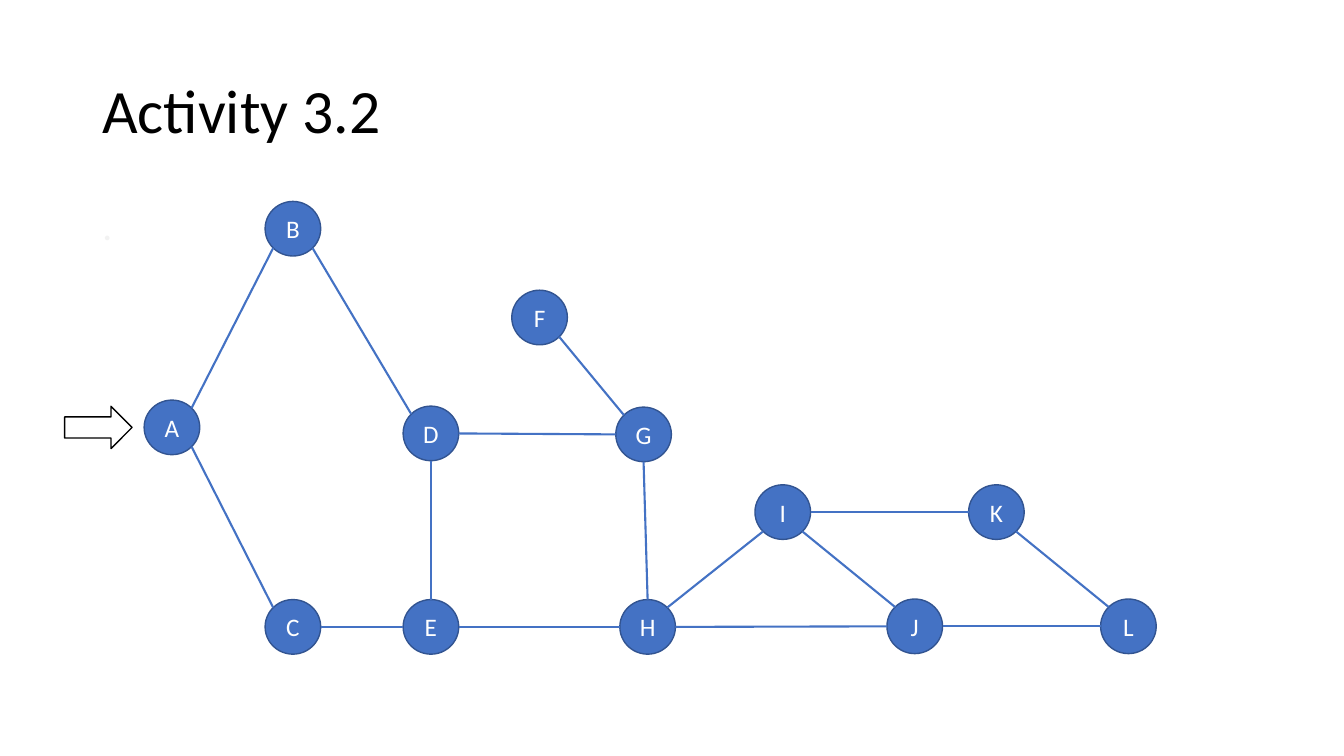
"""Build the Activity 3.2 slide: a graph of twelve nodes with a start arrow."""
import math
from dataclasses import dataclass

import pptx
import pptx.dml.color
import pptx.enum.shapes
import pptx.enum.text
import pptx.oxml.ns
import pptx.util
from lxml import etree

Pt = pptx.util.Pt
SHAPE = pptx.enum.shapes.MSO_SHAPE
ANCHOR = pptx.enum.text.MSO_ANCHOR
ALIGN = pptx.enum.text.PP_ALIGN


@dataclass(frozen=True)
class Theme:
    font: str = "Calibri"
    black: str = "000000"
    white: str = "FFFFFF"
    faint: str = "F2F2F2"
    blue: str = "4472C4"
    outline: str = "325491"
    title_size: float = 44
    body_size: float = 28
    node_size: float = 18
    outline_width: float = 1
    edge_width: float = 1.5


NODE_W, NODE_H = 39.7, 39
NODES = {
    "A": (122.8, 305.3), "B": (209.2, 163.4), "C": (209.2, 447.8),
    "D": (307.8, 309.6), "E": (307.8, 447.8), "F": (385.4, 226.8),
    "G": (459.7, 310.3), "H": (462.6, 447.8), "I": (559.1, 365.8),
    "J": (653.4, 447.4), "K": (711.7, 365.8), "L": (806, 447.4),
}
ANGLES = {"e": 0, "se": 45, "s": 90, "sw": 135, "w": 180, "nw": 225, "n": 270, "ne": 315}
EDGES = [
    ("A", "ne", "B", "sw"), ("A", "se", "C", "nw"), ("B", "se", "D", "nw"),
    ("C", "e", "E", "w"), ("D", "s", "E", "n"), ("D", "e", "G", "w"),
    ("E", "e", "H", "w"), ("F", "se", "G", "nw"), ("G", "s", "H", "n"),
    ("H", "ne", "I", "sw"), ("H", "e", "J", "w"), ("I", "se", "J", "nw"),
    ("I", "e", "K", "w"), ("J", "e", "L", "w"), ("K", "se", "L", "nw"),
]


def rgb(value):
    return pptx.dml.color.RGBColor.from_string(value)


def site(name, side):
    x, y = NODES[name]
    angle = math.radians(ANGLES[side])
    return x + NODE_W / 2 * math.cos(angle), y + NODE_H / 2 * math.sin(angle)


class GraphSlide:
    """Draw text, nodes, edges and arrows on one slide in one theme."""

    def __init__(self, s, theme):
        self.s = s
        self.theme = theme

    def run(self, p, text, size, color):
        r = p.add_run()
        r.text = text
        r.font.name = self.theme.font
        r.font.size = Pt(size)
        r.font.color.rgb = rgb(color)

    def text(self, text, left, top, width, height, size, color, anchor):
        tf = self.s.shapes.add_textbox(Pt(left), Pt(top), Pt(width), Pt(height)).text_frame
        tf.word_wrap = True
        tf.vertical_anchor = anchor
        p = tf.paragraphs[0]
        p.line_spacing = 0.9
        self.run(p, text, size, color)

    def shape(self, kind, left, top, width, height, fill, line):
        sp = self.s.shapes.add_shape(kind, Pt(left), Pt(top), Pt(width), Pt(height))
        sp.shadow.inherit = False
        sp.fill.solid()
        sp.fill.fore_color.rgb = rgb(fill)
        sp.line.color.rgb = rgb(line)
        sp.line.width = Pt(self.theme.outline_width)
        return sp

    def node(self, name, x, y):
        t = self.theme
        sp = self.shape(SHAPE.OVAL, x - NODE_W / 2, y - NODE_H / 2,
                        NODE_W, NODE_H, t.blue, t.outline)
        tf = sp.text_frame
        tf.vertical_anchor = ANCHOR.MIDDLE
        p = tf.paragraphs[0]
        p.alignment = ALIGN.CENTER
        self.run(p, name, t.node_size, t.white)

    def edge(self, start, end):
        points = [Pt(v) for v in (*start, *end)]
        line = self.s.shapes.add_connector(pptx.enum.shapes.MSO_CONNECTOR.STRAIGHT, *points)
        line.line.color.rgb = rgb(self.theme.blue)
        line.line.width = Pt(self.theme.edge_width)
        etree.SubElement(line._element.spPr, pptx.oxml.ns.qn("a:effectLst"))

    def arrow(self, left, top, width, height):
        self.shape(SHAPE.RIGHT_ARROW, left, top, width, height,
                   self.theme.white, self.theme.black)


def main():
    prs = pptx.Presentation()
    prs.slide_width, prs.slide_height = Pt(960), Pt(540)
    theme = Theme()
    graph = GraphSlide(prs.slides.add_slide(prs.slide_layouts[6]), theme)
    graph.text("Activity 3.2", 66, 28.8, 828, 104.4,
               theme.title_size, theme.black, ANCHOR.MIDDLE)
    graph.text(".", 66, 143.8, 828, 342.6, theme.body_size, theme.faint, ANCHOR.TOP)
    for name, (x, y) in NODES.items():
        graph.node(name, x, y)
    for a, a_side, b, b_side in EDGES:
        graph.edge(site(a, a_side), site(b, b_side))
    graph.arrow(46.2, 290.2, 48.2, 30.2)
    prs.save("out.pptx")


if __name__ == "__main__":
    main()
